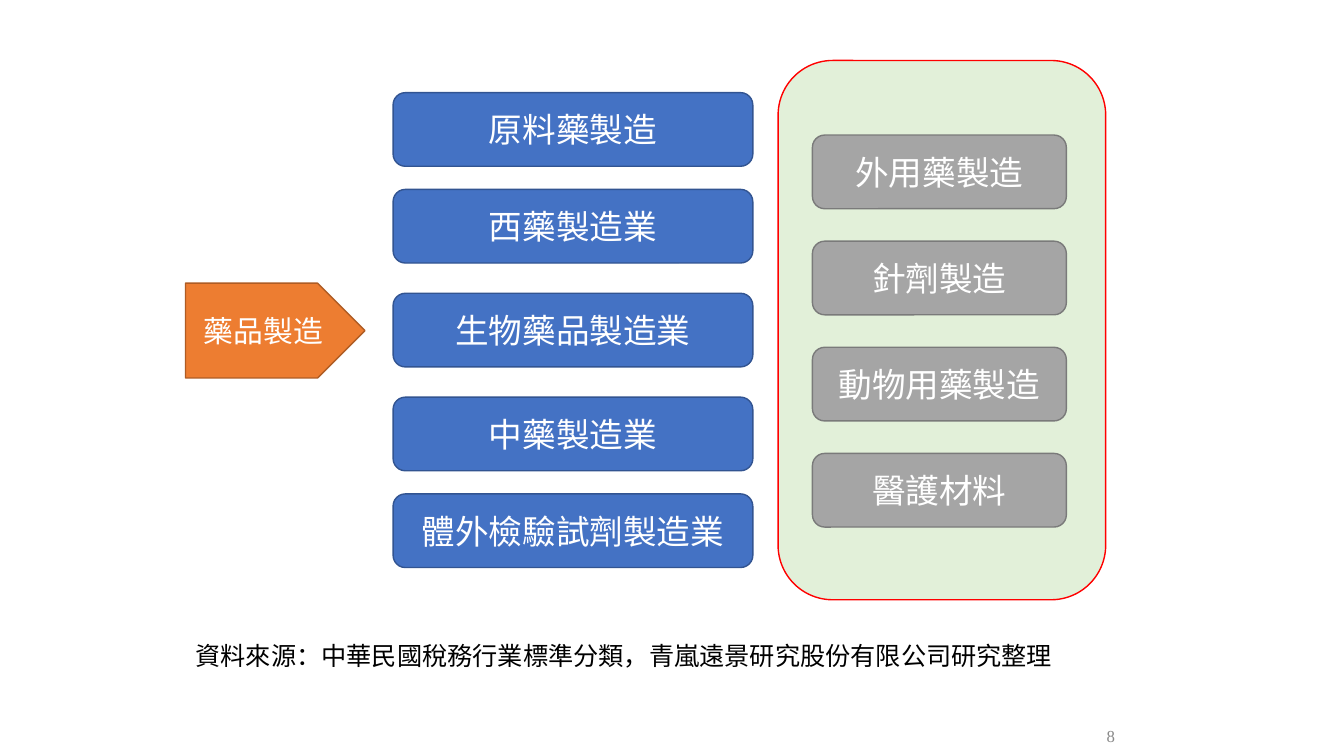
from pptx import Presentation
from pptx.dml.color import RGBColor
from pptx.enum.shapes import MSO_SHAPE as Kind
from pptx.enum.text import MSO_ANCHOR as Anchor, PP_ALIGN as Align
from pptx.oxml.ns import qn
from pptx.util import Pt

BLUE = ("4472C4", "325491")
GRAY = ("A5A5A5", "7A7A7A")
ORANGE = ("ED7D31", "AF5C24")
GREEN = ("E2F0D9", "FF0000")
BAR = 52.6  # height of every labelled bar


def paint(color):
    return RGBColor.from_string(color)


def write(frame, text, size, font, color, align):
    para = frame.paragraphs[0]
    para.alignment = align
    run = para.add_run()
    run.text = text
    run.font.size = Pt(size)
    run.font.name = font
    run.font.color.rgb = paint(color)
    return run


def block(slide, kind, box, colors, text="", size=24):
    """Filled and outlined shape with an optional centred label."""
    shape = slide.shapes.add_shape(kind, *map(Pt, box))
    shape.shadow.inherit = False
    fill, line = colors
    shape.fill.solid()
    shape.fill.fore_color.rgb = paint(fill)
    shape.line.color.rgb = paint(line)
    shape.line.width = Pt(1)
    if text:
        frame = shape.text_frame
        frame.word_wrap = True
        frame.vertical_anchor = Anchor.MIDDLE
        write(frame, text, size, "Calibri", "FFFFFF", Align.CENTER)


def sectors(slide, left, top, width, height):
    """Blue bars spread evenly about the middle one, the outer gaps tighter."""
    names = ("原料藥製造", "西藥製造業", "生物藥品製造業", "中藥製造業", "體外檢驗試劑製造業")
    reach = (height - BAR) / 2
    shifts = (-reach, -74.2, 0, 74.2, reach)
    for name, shift in zip(names, shifts):
        box = (left, top + reach + shift, width, BAR)
        block(slide, Kind.ROUNDED_RECTANGLE, box, BLUE, name)


def related(slide, left, top, width, height):
    """Green panel holding a column of gray bars."""
    block(slide, Kind.ROUNDED_RECTANGLE, (left, top, width, height), GREEN)
    names = ("外用藥製造", "針劑製造", "動物用藥製造", "醫護材料")
    for row, name in enumerate(names):
        box = (left + 24.5, top + 53.3 + row * 75.8, 181.4, BAR)
        block(slide, Kind.ROUNDED_RECTANGLE, box, GRAY, name)


def source(slide, *box):
    frame = slide.shapes.add_textbox(*map(Pt, box)).text_frame
    frame.word_wrap = False
    font = "Noto Sans CJK SC"
    text = "資料來源：中華民國稅務行業標準分類，青嵐遠景研究股份有限公司研究整理"
    run = write(frame, text, 18, font, "000000", Align.LEFT)
    east = run.font._element.makeelement(qn("a:ea"), {"typeface": font})
    run.font._element.find(qn("a:latin")).addnext(east)


def number(slide, *box):
    frame = slide.shapes.add_textbox(*map(Pt, box)).text_frame
    frame.word_wrap = True
    frame.vertical_anchor = Anchor.MIDDLE
    write(frame, "8", 12, "Times New Roman", "898989", Align.RIGHT)


def main():
    deck = Presentation()
    deck.slide_width, deck.slide_height = Pt(960), Pt(540)
    slide = deck.slides.add_slide(deck.slide_layouts[6])
    related(slide, 555.8, 43.2, 234, 385.2)
    source(slide, 132.5, 453.6, 632.2, 28.8)
    number(slide, 635.8, 507.6, 167.8, 36)
    block(slide, Kind.PENTAGON, (132.5, 202.3, 128.2, 67.7), ORANGE, "藥品製造", 21.3)
    sectors(slide, 280.8, 66.2, 257, 339.2)
    deck.save("out.pptx")


if __name__ == "__main__":
    main()
